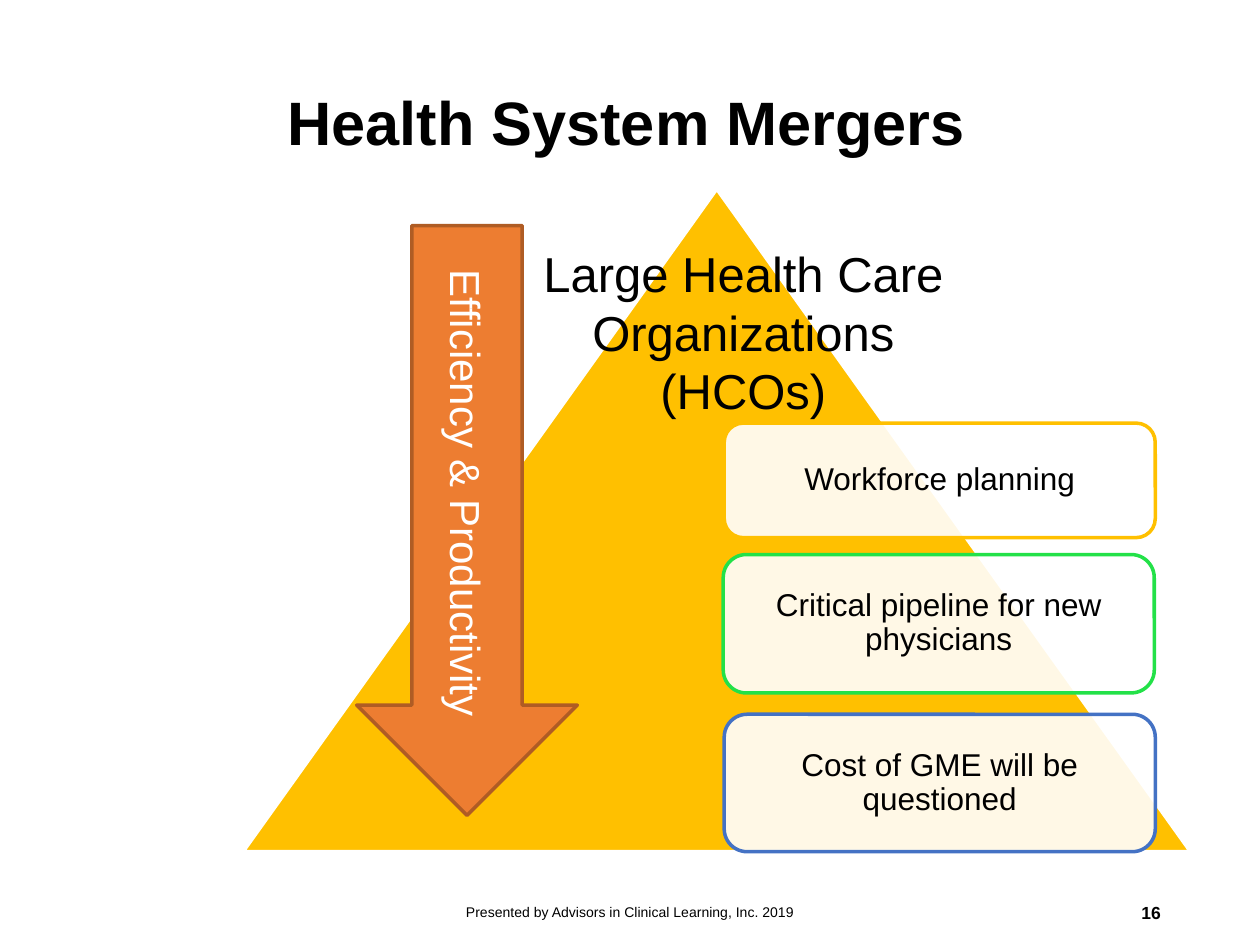
from lxml import etree
from pptx import Presentation
from pptx.dml.color import RGBColor
from pptx.enum.shapes import MSO_SHAPE
from pptx.enum.text import MSO_ANCHOR, MSO_AUTO_SIZE, PP_ALIGN
from pptx.oxml.ns import qn
from pptx.util import Cm, Pt

BLACK = RGBColor(0x00, 0x00, 0x00)
WHITE = RGBColor(0xFF, 0xFF, 0xFF)
GOLD = RGBColor(0xFF, 0xC0, 0x00)
GREEN = RGBColor(0x23, 0xE1, 0x48)
BLUE = RGBColor(0x44, 0x72, 0xC4)
ORANGE = RGBColor(0xED, 0x7D, 0x31)
RUST = RGBColor(0xAF, 0x5C, 0x24)
TRIANGLE = MSO_SHAPE.ISOSCELES_TRIANGLE
ROUNDED = MSO_SHAPE.ROUNDED_RECTANGLE
DOWN_ARROW = MSO_SHAPE.DOWN_ARROW
TOP, MIDDLE = MSO_ANCHOR.TOP, MSO_ANCHOR.MIDDLE
LEFT, CENTER, RIGHT = PP_ALIGN.LEFT, PP_ALIGN.CENTER, PP_ALIGN.RIGHT
NO_FIT = MSO_AUTO_SIZE.NONE
TITLE_ONLY = 5


class SlideBuilder:
    """Hold the text style and the current slide, and add elements to it."""

    def __init__(self, prs, font="Arial"):
        self.slide = prs.slides.add_slide(prs.slide_layouts[TITLE_ONLY])
        self.font = font

    def set_text(self, sp, text, size, color=BLACK, bold=False, align=CENTER,
                 anchor=MIDDLE, spacing=1.0):
        tf = sp.text_frame
        tf.word_wrap = True
        tf.auto_size = NO_FIT
        tf.vertical_anchor = anchor
        p = tf.paragraphs[0]
        p.text = text
        p.alignment = align
        p.line_spacing = spacing
        p.font.name = self.font
        p.font.size = Pt(size)
        p.font.bold = bold
        p.font.color.rgb = color

    def title(self, box, text):
        sp = self.slide.shapes.title
        sp.left, sp.top, sp.width, sp.height = map(Cm, box)
        self.set_text(sp, text, 35, bold=True, align=LEFT, spacing=0.9)

    def label(self, box, text, size, **style):
        sp = self.slide.shapes.add_textbox(*map(Cm, box))
        self.set_text(sp, text, size, **style)

    def shape(self, kind, box, fill, line):
        sp = self.slide.shapes.add_shape(kind, *map(Cm, box))
        sp.shadow.inherit = False
        sp.fill.solid()
        sp.fill.fore_color.rgb = fill
        sp.line.color.rgb = line
        sp.line.width = Pt(2)
        return sp

    def card(self, box, text, line):
        sp = self.shape(ROUNDED, box, WHITE, line)
        color = sp.element.spPr.find(qn("a:solidFill")).find(qn("a:srgbClr"))
        etree.SubElement(color, qn("a:alpha")).set("val", "90000")
        tf = sp.text_frame
        tf.margin_left = tf.margin_right = Cm(0.3)
        self.set_text(sp, text, 18, spacing=0.9)

    def arrow(self, box, text):
        sp = self.shape(DOWN_ARROW, box, ORANGE, RUST)
        self.set_text(sp, text, 24, color=WHITE)
        sp.element.txBody.bodyPr.set("vert", "vert")


def main():
    prs = Presentation()
    prs.slide_width, prs.slide_height = Cm(25.4), Cm(19.05)
    s = SlideBuilder(prs)
    s.title((5.54, 0.69, 18.14, 3.68), "Health System Mergers")
    s.label((17.93, 17.88, 5.72, 1.02), "16", 10, bold=True, align=RIGHT)
    s.shape(TRIANGLE, (4.9, 3.81, 19.1, 13.36), GOLD, WHITE)
    cards = [
        (14.6, 8.53, 2.31, "Workforce planning", GOLD),
        (14.58, 11.18, 2.79, "Critical pipeline for new physicians", GREEN),
        (14.6, 14.4, 2.77, "Cost of GME will be questioned", BLUE),
    ]
    for left, top, height, text, line in cards:
        s.card((left, top, 8.69, height), text, line)
    s.label((10.54, 4.78, 8.89, 3.84),
            "Large Health Care Organizations (HCOs)", 28, anchor=TOP)
    s.arrow((7.19, 4.55, 4.45, 11.89), "Efficiency & Productivity")
    s.label((8.41, 17.88, 8.59, 1.02),
            "Presented by Advisors in Clinical Learning, Inc. 2019", 8)
    prs.save("out.pptx")


if __name__ == "__main__":
    main()
